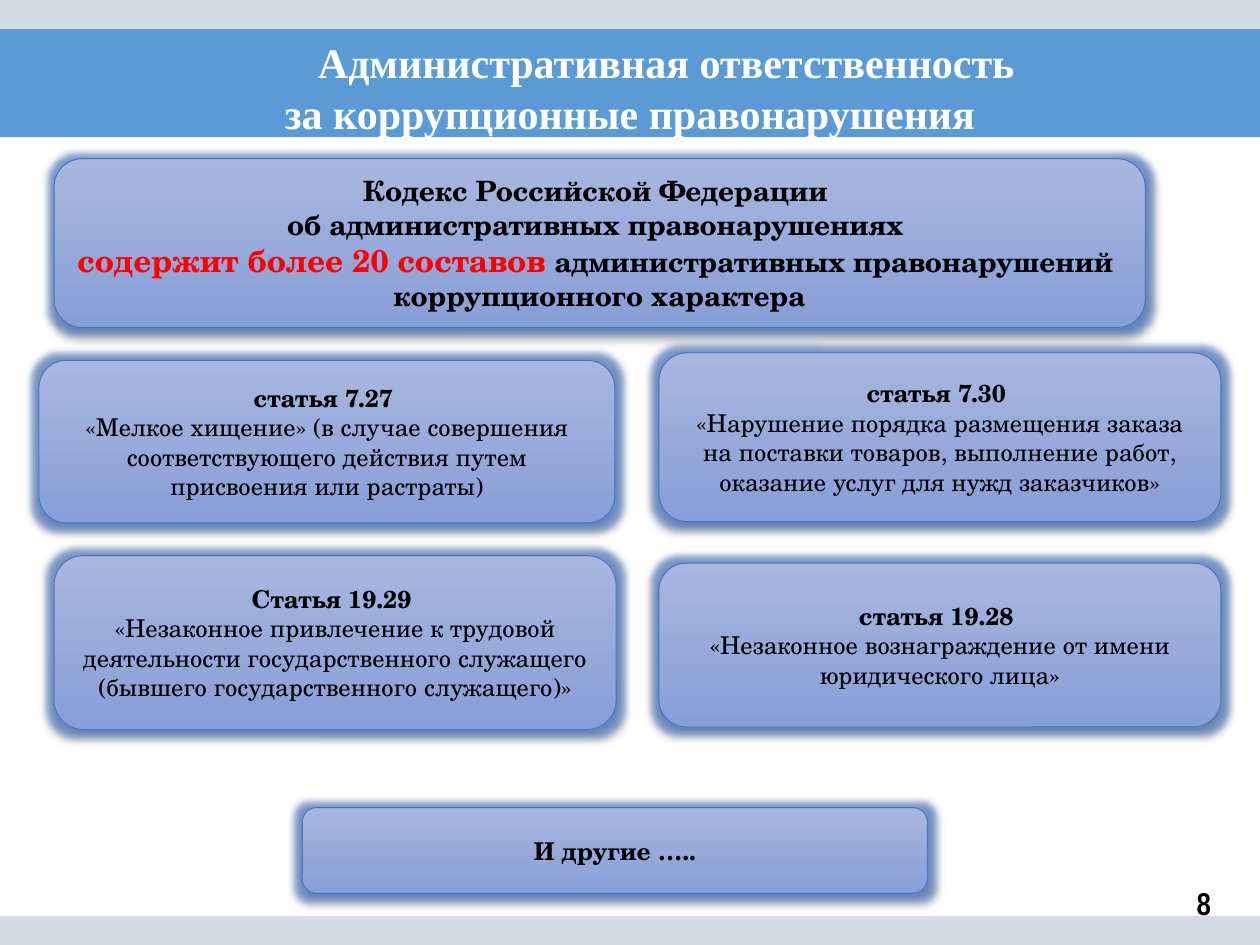
import lxml.etree
import pptx
import pptx.dml.color
import pptx.enum.shapes
import pptx.enum.text
import pptx.oxml
import pptx.util

Inches, Pt = pptx.util.Inches, pptx.util.Pt
SHAPES = pptx.enum.shapes.MSO_SHAPE
ALIGN = pptx.enum.text.PP_ALIGN
MIDDLE = pptx.enum.text.MSO_ANCHOR.MIDDLE

THEME = {
    "band": "5B9BD5", "edge": "D6DCE5",
    "card": ("A8B7DF", "889ED7"), "line": "4472C4",
    "title": {"size": 24, "name": "Times New Roman", "color": "FFFFFF", "bold": True},
    "number": {"size": 18, "name": "Arial Narrow", "color": "000000", "bold": True},
    "lead": {"size": 16, "name": "TeX Gyre Schola", "color": "000000", "bold": True},
    "accent": {"size": 18, "name": "TeX Gyre Schola", "color": "FF0000", "bold": True},
    "heading": {"size": 14, "name": "TeX Gyre Schola", "color": "000000", "bold": True},
    "body": {"size": 14, "name": "TeX Gyre Schola", "color": "000000", "bold": False},
}

# Each paragraph is a list of (text, style) runs.
TITLE = [
    [("Административная ответственность ", "title")],
    [("за коррупционные правонарушения", "title")],
]
CODE = [
    [("Кодекс Российской Федерации ", "lead")],
    [("об административных правонарушениях ", "lead")],
    [("содержит более 20 составов ", "accent"), ("административных правонарушений ", "lead")],
    [("коррупционного характера", "lead")],
]
ARTICLES = [
    ((0.31, 2.86, 4.57, 1.29), "статья 7.27 ",
     "«Мелкое хищение» (в случае совершения соответствующего действия путем "
     "присвоения или растраты)"),
    ((5.23, 2.8, 4.46, 1.34), "статья 7.30 ",
     "«Нарушение порядка размещения заказа на поставки товаров, выполнение работ, "
     "оказание услуг для нужд заказчиков»"),
    ((5.23, 4.47, 4.46, 1.3), "статья 19.28 ",
     "«Незаконное вознаграждение от имени юридического лица»"),
    ((0.43, 4.41, 4.46, 1.38), "Статья 19.29 ",
     "«Незаконное привлечение к трудовой деятельности государственного служащего "
     "(бывшего государственного служащего)»"),
]
CARDS = [((0.43, 1.26, 8.66, 1.34), CODE)]
CARDS += [(box, [[(heading, "heading")], [(body, "body")]]) for box, heading, body in ARTICLES]
CARDS.append(((2.4, 6.41, 4.96, 0.68), [[("И другие …..", "heading")]]))

BANDS = [((0, 0.23, 10, 0.86), "band"), ((0, 0, 10, 0.23), "edge"), ((0, 7.27, 10, 0.23), "edge")]

CARD_EFFECTS = """
<a:effectLst xmlns:a="http://schemas.openxmlformats.org/drawingml/2006/main">
  <a:glow rad="101600"><a:srgbClr val="4472C4"><a:alpha val="60000"/></a:srgbClr></a:glow>
  <a:outerShdw blurRad="40000" dist="20000" dir="5400000" rotWithShape="0">
    <a:srgbClr val="000000"><a:alpha val="38000"/></a:srgbClr>
  </a:outerShdw>
</a:effectLst>"""


def rgb(value):
    return pptx.dml.color.RGBColor.from_string(value)


def write(shape, paragraphs, align=ALIGN.CENTER):
    frame = shape.text_frame
    frame.word_wrap = True
    frame.vertical_anchor = MIDDLE
    for index, runs in enumerate(paragraphs):
        paragraph = frame.add_paragraph() if index else frame.paragraphs[0]
        paragraph.alignment = align
        for text, style in runs:
            run = paragraph.add_run()
            run.text = text
            values = THEME[style]
            formats = {"size": Pt(values["size"]), "name": values["name"], "bold": values["bold"]}
            for name, value in formats.items():
                setattr(run.font, name, value)
            run.font.color.rgb = rgb(values["color"])


def set_margins(frame, left=0, right=0):
    margins = {"left": left, "right": right, "top": 0, "bottom": 0}
    for side, value in margins.items():
        setattr(frame, f"margin_{side}", Inches(value))


def add_band(slide, box, color):
    band = slide.shapes.add_shape(SHAPES.RECTANGLE, *map(Inches, box))
    band.shadow.inherit = False
    band.fill.solid()
    band.fill.fore_color.rgb = rgb(THEME[color])
    band.line.fill.background()


def add_title(slide):
    title = slide.shapes.title
    slide.shapes._spTree.append(title._element)  # in front of the bands
    title.left, title.top, title.width, title.height = map(Inches, (0, 0.29, 10, 0.8))
    write(title, TITLE)
    set_margins(title.text_frame)
    for paragraph in title.text_frame.paragraphs:
        paragraph.line_spacing = Pt(29)
    first_line = title.text_frame.paragraphs[0]._p.get_or_add_pPr()
    first_line.set("indent", str(Inches(0.66)))


def add_card(slide, box, paragraphs):
    card = slide.shapes.add_shape(SHAPES.ROUNDED_RECTANGLE, *map(Inches, box))
    card.fill.gradient()
    card.fill.gradient_angle = 270
    for stop, color in zip(card.fill.gradient_stops, THEME["card"]):
        stop.color.rgb = rgb(color)
    card.line.color.rgb = rgb(THEME["line"])
    card.line.width = Pt(0.5)
    card._element.spPr.append(pptx.oxml.parse_xml(CARD_EFFECTS))
    write(card, paragraphs)


def main():
    presentation = pptx.Presentation()
    presentation.slide_width, presentation.slide_height = Inches(10), Inches(7.5)
    slide = presentation.slides.add_slide(presentation.slide_layouts[5])
    for box, color in BANDS:
        add_band(slide, box, color)
    add_title(slide)
    number = slide.shapes.add_textbox(*map(Inches, (9.4, 6.95, 0.29, 0.43)))
    write(number, [[("8", "number")]], ALIGN.RIGHT)
    set_margins(number.text_frame, right=0.08)
    for box, paragraphs in CARDS:
        add_card(slide, box, paragraphs)
    presentation.save("out.pptx")


if __name__ == "__main__":
    main()
